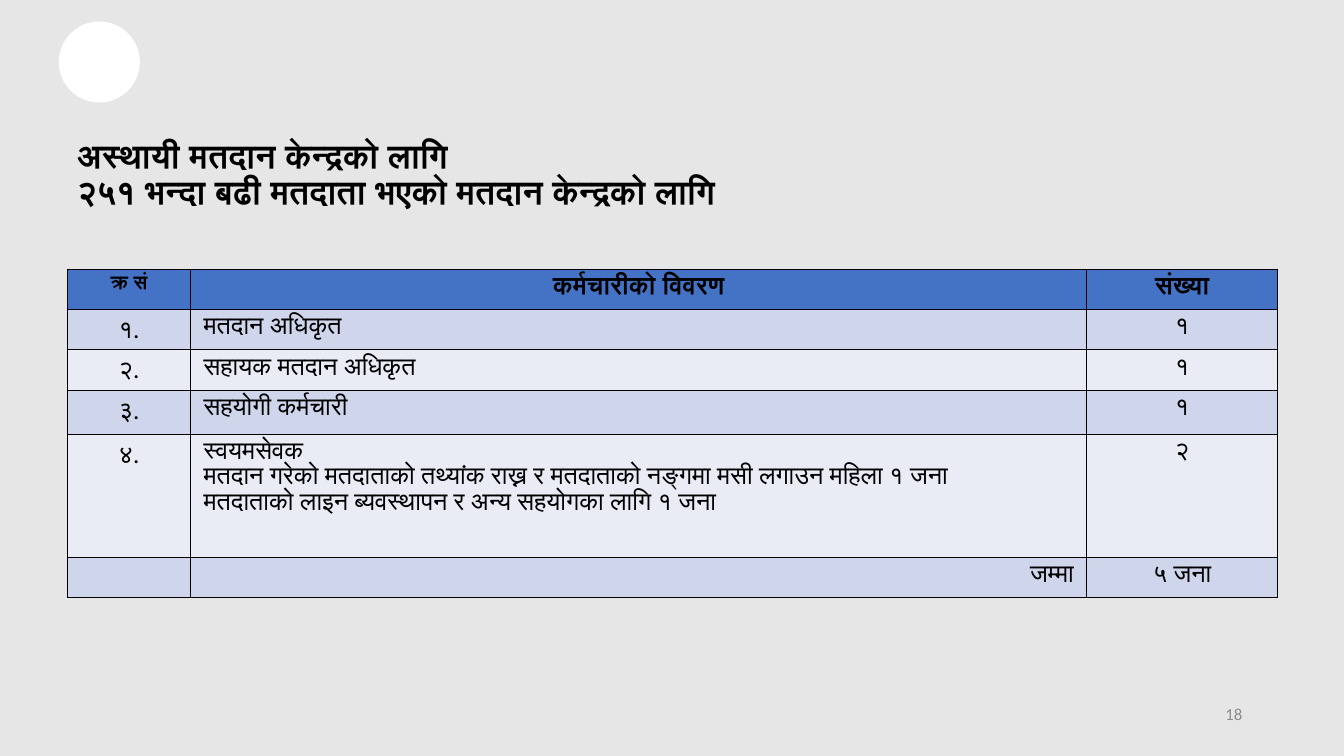
from dataclasses import dataclass

from lxml import etree
from pptx import Presentation
from pptx.dml.color import RGBColor
from pptx.enum.shapes import MSO_SHAPE
from pptx.enum.text import MSO_ANCHOR, PP_ALIGN
from pptx.oxml.ns import qn
from pptx.util import Inches, Pt

LEFT, CENTER, RIGHT = PP_ALIGN.LEFT, PP_ALIGN.CENTER, PP_ALIGN.RIGHT
MIDDLE = MSO_ANCHOR.MIDDLE
OVAL = MSO_SHAPE.OVAL


@dataclass(frozen=True)
class Theme:
    background: str = "E7E6E6"
    white: str = "FFFFFF"
    ink: str = "000000"
    muted: str = "8C8C8C"
    header: str = "4472C4"
    bands: tuple = ("CFD5EA", "E9EBF5")
    title_font: str = "Lato"
    body_font: str = "Calibri"
    title_size: int = 24
    body_size: int = 18
    serial_header_size: int = 14
    number_size: int = 12


THEME = Theme()


def style_text(frame, size, align, bold=False, font=THEME.body_font, color=THEME.ink):
    for paragraph in frame.paragraphs:
        paragraph.alignment = align
        for run in paragraph.runs:
            run.font.size = Pt(size)
            run.font.bold = bold
            run.font.name = font
            run.font.color.rgb = RGBColor.from_string(color)


def add_borders(cell):
    properties = cell._tc.get_or_add_tcPr()
    for index, side in enumerate(("lnL", "lnR", "lnT", "lnB")):
        line = etree.Element(qn(f"a:{side}"), w=str(Pt(1)))
        fill = etree.SubElement(line, qn("a:solidFill"))
        etree.SubElement(fill, qn("a:srgbClr"), val=THEME.ink)
        properties.insert(index, line)


prs = Presentation()
prs.slide_width, prs.slide_height = Inches(13.33), Inches(7.5)
slide = prs.slides.add_slide(prs.slide_layouts[6])
slide.background.fill.solid()
slide.background.fill.fore_color.rgb = RGBColor.from_string(THEME.background)

# Emblem disc
emblem = slide.shapes.add_shape(OVAL, Inches(0.59), Inches(0.22), Inches(0.79), Inches(0.79))
emblem.shadow.inherit = False
emblem.fill.solid()
emblem.fill.fore_color.rgb = RGBColor.from_string(THEME.white)
emblem.line.color.rgb = RGBColor.from_string(THEME.white)
emblem.line.width = Pt(1)

# Title
title = slide.shapes.add_textbox(Inches(0.67), Inches(1.33), Inches(12), Inches(0.83)).text_frame
title.word_wrap = True
title.vertical_anchor = MIDDLE
title.text = "अस्थायी मतदान केन्द्रको लागि\v२५१ भन्दा बढी मतदाता भएको मतदान केन्द्रको लागि"
title.paragraphs[0].line_spacing = 0.9
style_text(title, THEME.title_size, LEFT, bold=True, font=THEME.title_font)

# Staff table
staff_rows = [
    ("क्र सं", "कर्मचारीको विवरण", "संख्या"),
    ("१.", "मतदान अधिकृत", "१"),
    ("२.", "सहायक मतदान अधिकृत", "१"),
    ("३.", "सहयोगी कर्मचारी", "१"),
    ("४.", "स्वयमसेवक\n"
           "मतदान गरेको मतदाताको तथ्यांक राख्न र मतदाताको नङ्गमा मसी लगाउन महिला १ जना\n"
           "मतदाताको लाइन ब्यवस्थापन र अन्य सहयोगका लागि १ जना", "२"),
    ("", "जम्मा", "५ जना"),
]
column_widths = (1.22, 8.89, 1.89)
row_heights = (0.39, 0.37, 0.37, 0.44, 1.22, 0.37)
last_row = len(staff_rows) - 1

staff = slide.shapes.add_table(len(staff_rows), len(column_widths), Inches(0.67), Inches(2.67),
                               Inches(sum(column_widths)), Inches(sum(row_heights))).table
for column, width in zip(staff.columns, column_widths):
    column.width = Inches(width)
for row, height in zip(staff.rows, row_heights):
    row.height = Inches(height)

for r, texts in enumerate(staff_rows):
    is_header = r == 0
    for c, text in enumerate(texts):
        cell = staff.cell(r, c)
        cell.margin_left = cell.margin_right = Inches(0.13)
        cell.margin_top = cell.margin_bottom = Inches(0.05)
        cell.fill.solid()
        cell.fill.fore_color.rgb = RGBColor.from_string(
            THEME.header if is_header else THEME.bands[(r - 1) % 2])
        add_borders(cell)
        cell.text_frame.text = text
        for duty in cell.text_frame.paragraphs[1:]:
            properties = duty._p.get_or_add_pPr()
            properties.set("marL", str(Inches(0.38)))
            properties.set("indent", str(-Inches(0.38)))
            etree.SubElement(properties, qn("a:buAutoNum"), type="hindiAlpha1Period")
        if c != 1 or is_header:
            align = CENTER
        else:
            align = RIGHT if r == last_row else LEFT
        size = THEME.serial_header_size if is_header and c == 0 else THEME.body_size
        style_text(cell.text_frame, size, align, bold=is_header)

# Slide number
number = slide.shapes.add_textbox(Inches(9.42), Inches(6.88), Inches(3), Inches(0.4)).text_frame
number.word_wrap = True
number.vertical_anchor = MIDDLE
number.text = "18"
style_text(number, THEME.number_size, RIGHT, color=THEME.muted)

prs.save("out.pptx")
